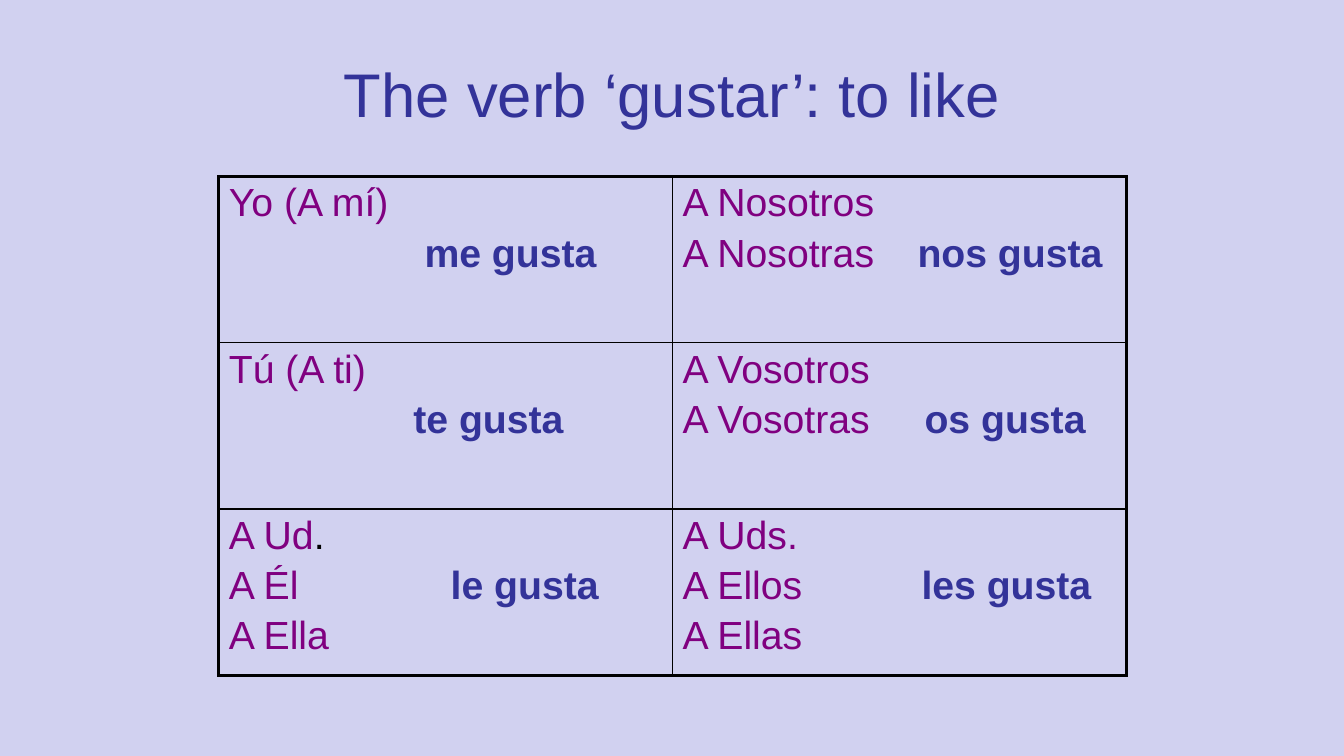
import pptx
import pptx.dml.color
import pptx.enum.text
import pptx.oxml
import pptx.oxml.ns
import pptx.util
from pptx.util import Inches

LAVENDER = pptx.dml.color.RGBColor(0xD1, 0xD1, 0xF0)
INDIGO = pptx.dml.color.RGBColor(0x33, 0x33, 0x99)
PURPLE = pptx.dml.color.RGBColor(0x80, 0x00, 0x80)
BLACK = pptx.dml.color.RGBColor(0, 0, 0)

TITLE_FONT = {"name": "Arial", "size": pptx.util.Pt(44)}
PRONOUN_FONT = {"name": "Arial", "size": pptx.util.Pt(28), "bold": False}
VERB_FONT = {**PRONOUN_FONT, "bold": True}

CONJUGATION = [
    [(["Yo (A mí)", ""], "me gusta", 1.94),
     (["A Nosotros", "A Nosotras"], "nos gusta", 2.33)],
    [(["Tú (A ti)", ""], "te gusta", 1.83),
     (["A Vosotros", "A Vosotras"], "os gusta", 2.4)],
    [(["A Ud.", "A Él", "A Ella"], "le gusta", 2.2),
     (["A Uds.", "A Ellos", "A Ellas"], "les gusta", 2.37)],
]


def add_run(paragraph, text, font_values, color):
    run = paragraph.add_run()
    run.text = text
    for name, value in font_values.items():
        setattr(run.font, name, value)
    run.font.color.rgb = color


def add_title(slide, left, top, width, height):
    title = slide.shapes.title
    box = {"left": left, "top": top, "width": width, "height": height}
    for name, value in box.items():
        setattr(title, name, Inches(value))
    title.text_frame.vertical_anchor = pptx.enum.text.MSO_ANCHOR.MIDDLE
    paragraph = title.text_frame.paragraphs[0]
    paragraph.alignment = pptx.enum.text.PP_ALIGN.CENTER
    add_run(paragraph, "The verb ‘gustar’: to like", TITLE_FONT, INDIGO)


def add_tab_stop(paragraph, position):
    paragraph._p.get_or_add_pPr().append(pptx.oxml.parse_xml(
        f'<a:tabLst {pptx.oxml.ns.nsdecls("a")}>'
        f'<a:tab pos="{Inches(position)}" algn="l"/></a:tabLst>'))


def set_borders(cell, outer_edges):
    properties = cell._tc.get_or_add_tcPr()
    for edge, is_outer in outer_edges.items():
        width = pptx.util.Pt(2.25 if is_outer else 1)
        properties.append(pptx.oxml.parse_xml(
            f'<a:ln{edge} {pptx.oxml.ns.nsdecls("a")} w="{width}">'
            f'<a:solidFill><a:srgbClr val="{BLACK}"/></a:solidFill></a:ln{edge}>'))


def fill_cell(cell, pronouns, verb, verb_position):
    for index, pronoun in enumerate(pronouns):
        paragraph = cell.text_frame.paragraphs[0]
        if index:
            paragraph = cell.text_frame.add_paragraph()
            paragraph.space_before = pptx.util.Pt(4.6)
        if pronoun == "A Ud.":
            add_run(paragraph, "A Ud", PRONOUN_FONT, PURPLE)
            add_run(paragraph, ".", PRONOUN_FONT, BLACK)
        elif pronoun:
            add_run(paragraph, pronoun, PRONOUN_FONT, PURPLE)
        if index == 1:
            add_tab_stop(paragraph, verb_position)
            add_run(paragraph, "\t" + verb, VERB_FONT, INDIGO)


def add_conjugation_table(slide, left, top, width, height):
    row_count, column_count = len(CONJUGATION), len(CONJUGATION[0])
    table = slide.shapes.add_table(
        row_count, column_count,
        Inches(left), Inches(top), Inches(width), Inches(height)).table
    table.first_row = False
    table.horz_banding = False
    for row, entries in enumerate(CONJUGATION):
        for column, entry in enumerate(entries):
            cell = table.cell(row, column)
            set_borders(cell, {
                "L": column == 0, "R": column == column_count - 1,
                "T": row == 0, "B": row == row_count - 1})
            cell.fill.background()
            fill_cell(cell, *entry)


def main():
    presentation = pptx.Presentation()
    presentation.slide_width = Inches(13.33)
    presentation.slide_height = Inches(7.5)
    slide = presentation.slides.add_slide(presentation.slide_layouts[5])
    slide.background.fill.solid()
    slide.background.fill.fore_color.rgb = LAVENDER
    add_title(slide, 0.67, 0.3, 12, 1.25)
    add_conjugation_table(slide, 2.17, 1.75, 9, 4.95)
    presentation.save("out.pptx")


if __name__ == "__main__":
    main()
